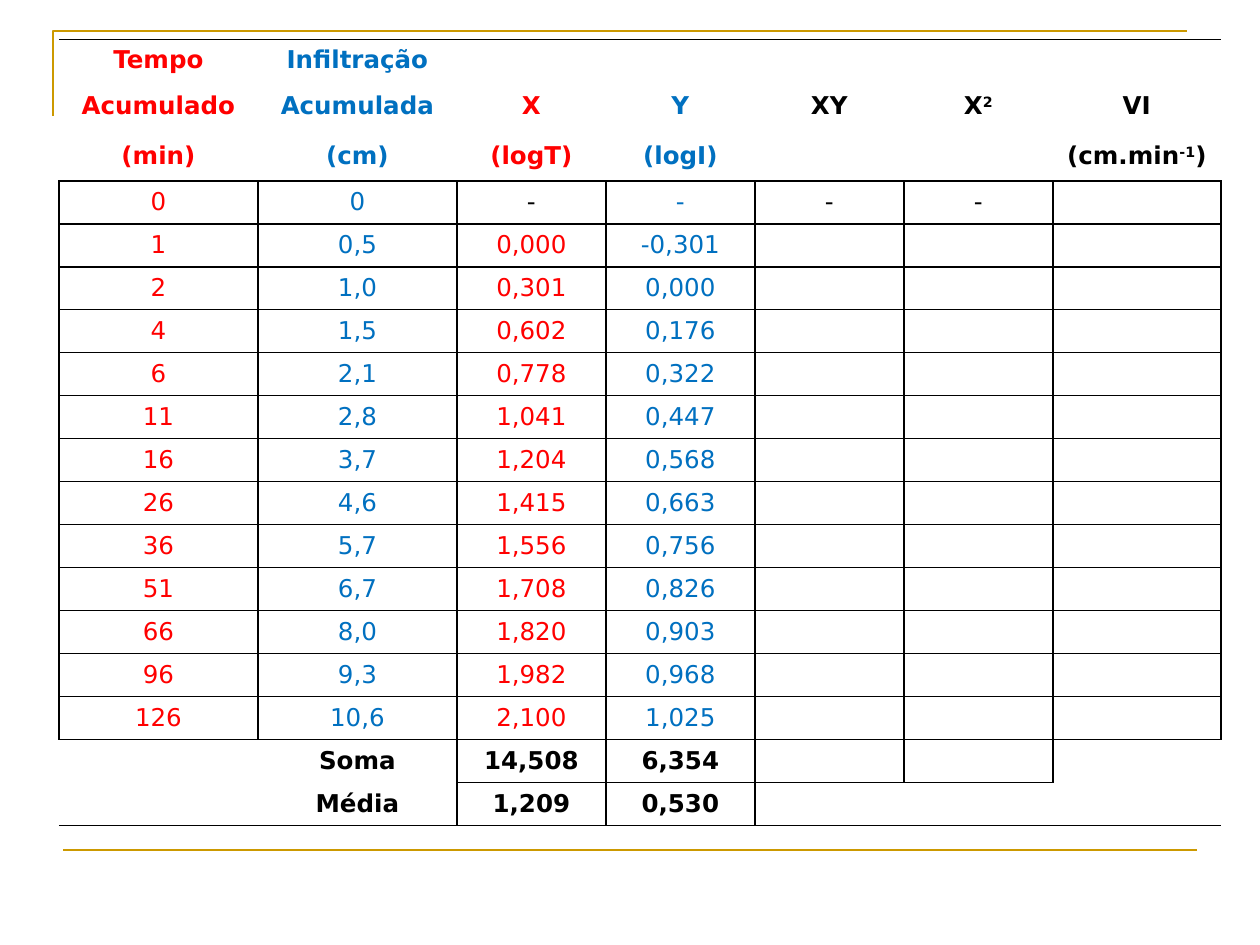
"""Build the infiltration test table slide."""
from lxml.etree import SubElement
from pptx import Presentation
from pptx.dml.color import RGBColor
from pptx.enum.shapes import MSO_CONNECTOR as CONN
from pptx.enum.text import MSO_ANCHOR as ANCHOR, PP_ALIGN as ALIGN
from pptx.oxml.ns import qn
from pptx.util import Pt

PX = 914400 / 126
RED, BLUE, BLACK, GOLD = "FF0000", "0070C0", "000000", "CC9900"
FONT = "DejaVu Sans"


def px(n):
    return round(n * PX)


def rgb(value):
    return RGBColor.from_string(value)


prs = Presentation()
prs.slide_width, prs.slide_height = px(1260), px(945)
s = prs.slides.add_slide(prs.slide_layouts[6])

builder = s.shapes.build_freeform(53, 116, scale=PX)
builder.add_line_segments([(53, 31), (1187, 31)], close=False)
corner = builder.convert_to_shape()
corner.fill.background()
corner.shadow.inherit = False
footer = s.shapes.add_connector(CONN.STRAIGHT, px(63), px(850), px(1197), px(850))
for sp in (corner, footer):
    sp.line.color.rgb = rgb(GOLD)
    sp.line.width = Pt(1.5)
SubElement(footer.element.spPr, qn("a:effectLst"))

header = [
    ["Tempo", "Infiltração"],
    ["Acumulado", "Acumulada", "X", "Y", "XY", "X^2", "VI"],
    ["(min)", "(cm)", "(logT)", "(logI)", "", "", "(cm.min^-1^)"],
]
readings = [
    ["0", "0", "-", "-", "-", "-"],
    ["1", "0,5", "0,000", "-0,301"],
    ["2", "1,0", "0,301", "0,000"],
    ["4", "1,5", "0,602", "0,176"],
    ["6", "2,1", "0,778", "0,322"],
    ["11", "2,8", "1,041", "0,447"],
    ["16", "3,7", "1,204", "0,568"],
    ["26", "4,6", "1,415", "0,663"],
    ["36", "5,7", "1,556", "0,756"],
    ["51", "6,7", "1,708", "0,826"],
    ["66", "8,0", "1,820", "0,903"],
    ["96", "9,3", "1,982", "0,968"],
    ["126", "10,6", "2,100", "1,025"],
]
totals = [["", "Soma", "14,508", "6,354"], ["", "Média", "1,209", "0,530"]]
rows = header + readings + totals
widths = [199, 199, 149, 149, 149, 149, 168]
heights = [43, 49, 50] + [43] * (len(rows) - 3)
col_colors = [RED, BLUE, RED, BLUE, BLACK, BLACK, BLACK]

first, soma, media = len(header), len(rows) - 2, len(rows) - 1
boxed = {(i, j) for i in range(first, soma) for j in range(7)}
boxed |= {(soma, j) for j in range(2, 6)} | {(media, 2), (media, 3)}
sides = {"a:lnL": (0, -1), "a:lnR": (0, 1), "a:lnT": (-1, 0), "a:lnB": (1, 0)}

frame = s.shapes.add_table(len(rows), 7, px(59), px(39), px(sum(widths)), px(sum(heights)))
table = frame.table
table.first_row = table.horz_banding = False
for col, width in zip(table.columns, widths):
    col.width = px(width)
for row, height in zip(table.rows, heights):
    row.height = px(height)

cell_format = {
    "margin_left": 0, "margin_right": 0, "margin_top": 0, "margin_bottom": 0,
    "vertical_anchor": ANCHOR.MIDDLE,
}
for i, texts in enumerate(rows):
    for j in range(7):
        cell = table.cell(i, j)
        for name, value in cell_format.items():
            setattr(cell, name, value)

        tcPr = cell._tc.get_or_add_tcPr()
        for tag, (di, dj) in sides.items():
            if {(i, j), (i + di, j + dj)} & boxed:
                weight = 1
            else:
                weight = 0.5 if i + di in (-1, len(rows)) else 0
            ln = SubElement(tcPr, qn(tag), w=str(Pt(weight)))
            if weight:
                SubElement(SubElement(ln, qn("a:solidFill")), qn("a:srgbClr"), val=BLACK)
            else:
                SubElement(ln, qn("a:noFill"))
        cell.fill.background()

        text = texts[j] if j < len(texts) else ""
        dash = text == "-" and j == 2
        color = BLACK if i >= soma or dash else col_colors[j]
        run_format = {"name": FONT, "size": Pt(14), "bold": i < first or i >= soma}
        p = cell.text_frame.paragraphs[0]
        p.alignment = ALIGN.CENTER
        for k, part in enumerate(text.split("^")):
            if not part:
                continue
            r = p.add_run()
            r.text = part
            for name, value in run_format.items():
                setattr(r.font, name, value)
            r.font.color.rgb = rgb(color)
            if k % 2:
                r.font._element.set("baseline", "30000")

prs.save("out.pptx")
